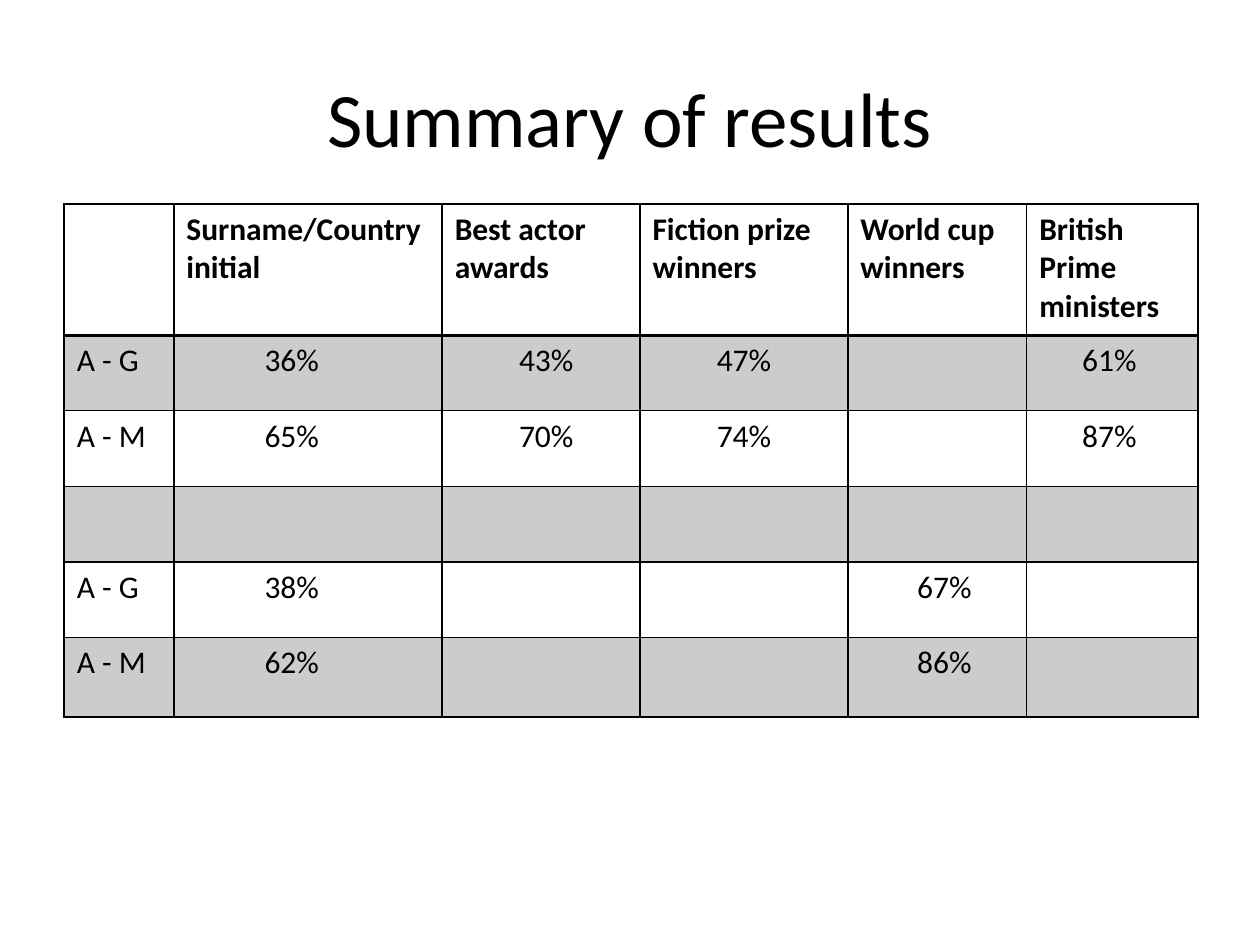
from dataclasses import dataclass

from lxml.etree import SubElement
from pptx import Presentation
from pptx.dml.color import RGBColor
from pptx.enum.text import MSO_ANCHOR as Anchor, PP_ALIGN as Align
from pptx.oxml.ns import qn
from pptx.util import Inches, Pt


@dataclass(frozen=True)
class Theme:
    """Colours, typeface and sizes used on the slide."""
    font: str = "Calibri"
    ink: str = "000000"
    band_opacity: int = 20
    title_size: int = 44
    body_size: int = 18
    thin_line: int = 1
    header_line: int = 2


class SlideBuilder:
    """Adds styled elements to the current slide."""

    def __init__(self, slide, theme):
        self.slide = slide
        self.theme = theme
        self.ink = RGBColor.from_string(theme.ink)

    def style_text(self, frame, size, bold=False, align=Align.LEFT):
        """Format every run in a text frame."""
        for para in frame.paragraphs:
            para.alignment = align
            for span in para.runs:
                span.font.name = self.theme.font
                span.font.size = Pt(size)
                span.font.bold = bold
                span.font.color.rgb = self.ink

    def title(self, text, left, top, width, height):
        """Add a centred title."""
        box = self.slide.shapes.add_textbox(
            Inches(left), Inches(top), Inches(width), Inches(height))
        frame = box.text_frame
        frame.word_wrap = True
        frame.vertical_anchor = Anchor.MIDDLE
        frame.text = text
        self.style_text(frame, self.theme.title_size, align=Align.CENTER)

    def border(self, cell, side, points):
        """Draw one side of a cell."""
        line = SubElement(cell._tc.get_or_add_tcPr(), qn(f"a:ln{side}"), w=str(Pt(points)))
        fill = SubElement(line, qn("a:solidFill"))
        SubElement(fill, qn("a:srgbClr"), val=self.theme.ink)

    def shade(self, cell):
        """Fill a cell with translucent ink."""
        cell.fill.solid()
        cell.fill.fore_color.rgb = self.ink
        color = cell._tc.tcPr.find(qn("a:solidFill")).find(qn("a:srgbClr"))
        SubElement(color, qn("a:alpha"), val=str(self.theme.band_opacity * 1000))

    def cell(self, cell, text, row, indent):
        """Fill in and style one table cell."""
        theme = self.theme
        is_header = row == 0
        cell.text = text
        self.style_text(cell.text_frame, theme.body_size, bold=is_header)
        if not is_header:
            cell.margin_left = Inches(indent)
        top = theme.header_line if row == 1 else theme.thin_line
        bottom = theme.header_line if is_header else theme.thin_line
        for side, points in zip("LRTB", (theme.thin_line, theme.thin_line, top, bottom)):
            self.border(cell, side, points)
        if row % 2:
            self.shade(cell)
        else:
            cell.fill.background()

    def table(self, rows, left, top, widths, heights, indents):
        """Add a bordered table with shaded odd rows."""
        frame = self.slide.shapes.add_table(
            len(rows), len(widths), Inches(left), Inches(top),
            Inches(sum(widths)), Inches(sum(heights)))
        table = frame.table
        table.first_row = table.horz_banding = False
        for column, width in zip(table.columns, widths):
            column.width = Inches(width)
        for row, height in zip(table.rows, heights):
            row.height = Inches(height)
        for row, texts in enumerate(rows):
            for column, text in enumerate(texts):
                self.cell(table.cell(row, column), text, row, indents[column])


RESULTS = [
    ["", "Surname/Country initial", "Best actor awards", "Fiction prize winners",
     "World cup winners", "British\vPrime ministers"],
    ["A - G", "36%", "43%", "47%", "", "61%"],
    ["A - M", "65%", "70%", "74%", "", "87%"],
    [""] * 6,
    ["A - G", "38%", "", "", "67%", ""],
    ["A - M", "62%", "", "", "86%", ""],
]


def main():
    """Build the results slide."""
    deck = Presentation()
    deck.slide_width, deck.slide_height = Inches(10), Inches(7.5)
    page = SlideBuilder(deck.slides.add_slide(deck.slide_layouts[6]), Theme())
    page.title("Summary of results", 0.5, 0.3, 9, 1.25)
    page.table(
        RESULTS, 0.51, 1.62,
        widths=[0.87, 2.13, 1.57, 1.65, 1.42, 1.36],
        heights=[1.04, 0.6, 0.6, 0.6, 0.6, 0.63],
        indents=[0.1, 0.72, 0.61, 0.61, 0.55, 0.44])
    deck.save("out.pptx")


if __name__ == "__main__":
    main()
